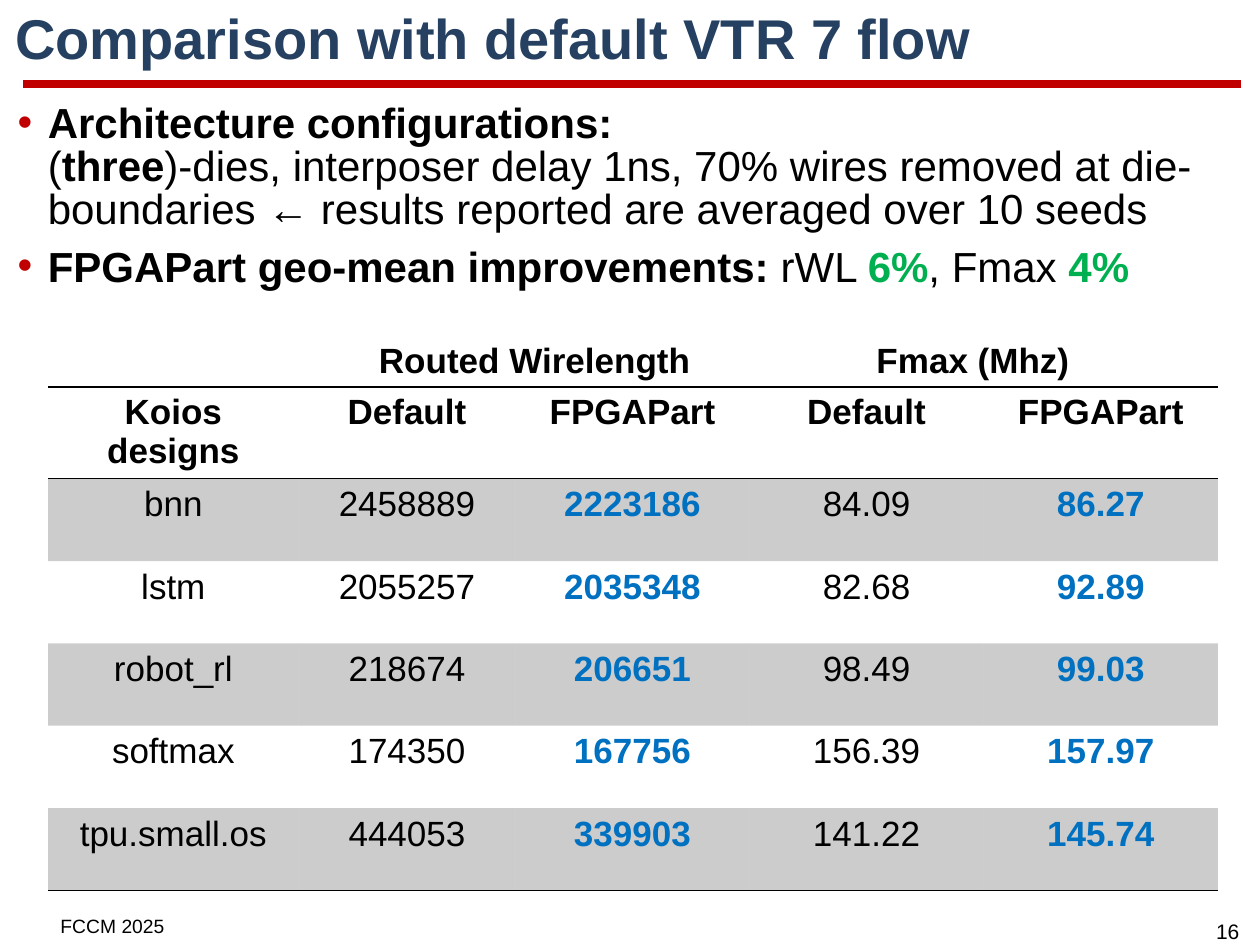
import lxml.etree
import pptx
import pptx.dml.color
import pptx.enum.shapes
import pptx.enum.text
import pptx.oxml
import pptx.oxml.ns
import pptx.util

Cm, Pt = pptx.util.Cm, pptx.util.Pt
ALIGN = pptx.enum.text.PP_ALIGN
ANCHOR = pptx.enum.text.MSO_ANCHOR
NS = pptx.oxml.ns.nsdecls("a")
HEX = {"ink": "000000", "navy": "254061", "red": "C00000",
       "green": "00B050", "blue": "0070C0"}


def write(para, text, size, tint="ink", bold=False):
    run = para.add_run()
    run.text = text
    form = {"name": "Arial", "size": Pt(size), "bold": bold}
    for key, val in form.items():
        setattr(run.font, key, val)
    run.font.color.rgb = pptx.dml.color.RGBColor.from_string(HEX[tint])


def place(shape, left, top, width, height):
    box = {"left": left, "top": top, "width": width, "height": height}
    for key, val in box.items():
        setattr(shape, key, Cm(val))


deck = pptx.Presentation()
deck.slide_width, deck.slide_height = Cm(25.4), Cm(19.05)
slide = deck.slides.add_slide(deck.slide_layouts[1])

# Rule under the title
rule = slide.shapes.add_connector(
    pptx.enum.shapes.MSO_CONNECTOR.STRAIGHT, Cm(0.46), Cm(1.7), Cm(25.02), Cm(1.7))
rule.line.width = Pt(4.5)
rule.line.color.rgb = pptx.dml.color.RGBColor.from_string(HEX["red"])
lxml.etree.SubElement(rule.element.spPr, pptx.oxml.ns.qn("a:effectLst"))

# Title and bullets
title, body = slide.placeholders
place(title, 0.05, 0.2, 25.22, 1.25)
place(body, 0.05, 1.98, 24.97, 15.8)
for shape in (title, body):
    shape.text_frame.auto_size = pptx.enum.text.MSO_AUTO_SIZE.NONE
title.text_frame.vertical_anchor = ANCHOR.MIDDLE
head = title.text_frame.paragraphs[0]
head.alignment, head.line_spacing = ALIGN.LEFT, 0.9
write(head, "Comparison with default VTR 7 flow", 32, "navy", True)

points = [
    [("Architecture configurations: ", "ink", True), None,
     ("(", "ink", False), ("three", "ink", True),
     (")-dies, interposer delay 1ns, 70% wires removed at die-boundaries "
      "← results reported are averaged over 10 seeds", "ink", False)],
    [("FPGAPart geo-mean improvements: ", "ink", True), ("rWL ", "ink", False),
     ("6%", "green", True), (", Fmax ", "ink", False), ("4%", "green", True)],
]
for num, parts in enumerate(points):
    para = body.text_frame.add_paragraph() if num else body.text_frame.paragraphs[0]
    props = para._p.get_or_add_pPr()
    props.set("marL", str(Cm(0.66)))
    props.set("indent", str(Cm(-0.61)))
    for tag in (f'<a:buClr {NS}><a:srgbClr val="{HEX["red"]}"/></a:buClr>',
                f'<a:buFont {NS} typeface="Arial"/>', f'<a:buChar {NS} char="•"/>'):
        props.append(pptx.oxml.parse_xml(tag))
    para.line_spacing, para.space_before = 0.85, Pt(8.4 if num else 0)
    for part in parts:
        if part:
            text, tint, bold = part
            write(para, text, 24, tint, bold)
        else:
            para.add_line_break()

# Results table
rows = [
    ["Koios designs", "Default", "FPGAPart", "Default", "FPGAPart"],
    ["bnn", "2458889", "2223186", "84.09", "86.27"],
    ["lstm", "2055257", "2035348", "82.68", "92.89"],
    ["robot_rl", "218674", "206651", "98.49", "99.03"],
    ["softmax", "174350", "167756", "156.39", "157.97"],
    ["tpu.small.os", "444053", "339903", "141.22", "145.74"],
]
wide = [5.05, 4.37, 4.72, 4.72, 4.72]
edges = {0: ("lnT", "lnB"), len(rows) - 1: ("lnB",)}
frame = slide.shapes.add_table(
    len(rows), len(wide), Cm(0.97), Cm(7.8), Cm(sum(wide)), Cm(10.15))
table = frame.table
table.first_row = table.horz_banding = False
style = table._tbl.tblPr.find(pptx.oxml.ns.qn("a:tableStyleId"))
style.text = "{2D5ABB26-0587-4C30-8999-92F81FD0307C}"  # no style, no grid
for col, width in zip(table.columns, wide):
    col.width = Cm(width)
for r, row in enumerate(rows):
    table.rows[r].height = Cm(1.66 if r else 1.85)
    for c, text in enumerate(row):
        cell = table.cell(r, c)
        para = cell.text_frame.paragraphs[0]
        para.alignment = ALIGN.CENTER
        ours = r > 0 and c in (2, 4)
        write(para, text, 20, "blue" if ours else "ink", ours or r == 0)
        props = cell._tc.get_or_add_tcPr()
        for edge in edges.get(r, ()):
            props.append(pptx.oxml.parse_xml(
                f'<a:{edge} {NS} w="{Pt(1)}"><a:solidFill>'
                f'<a:srgbClr val="{HEX["ink"]}"/></a:solidFill></a:{edge}>'))
        if r % 2:
            props.append(pptx.oxml.parse_xml(
                f'<a:solidFill {NS}><a:srgbClr val="{HEX["ink"]}">'
                '<a:alpha val="20000"/></a:srgbClr></a:solidFill>'))
        else:
            cell.fill.background()

# Column group heads, footer and page number
notes = [
    ("Routed Wirelength", (7.39, 6.7, 8.48, 1.12), 20, True, ALIGN.LEFT, True),
    ("Fmax (Mhz)", (17.42, 6.7, 7.9, 1.12), 20, True, ALIGN.LEFT, True),
    ("FCCM 2025", (0.97, 18.31, 4.75, 0.69), 11, False, ALIGN.LEFT, True),
    ("16", (24.13, 18.39, 1.24, 0.76), 12, False, ALIGN.CENTER, False),
]
for text, spot, size, bold, align, wrap in notes:
    box = slide.shapes.add_textbox(*map(Cm, spot))
    box.text_frame.word_wrap = wrap
    para = box.text_frame.paragraphs[0]
    para.alignment = align
    write(para, text, size, bold=bold)

deck.save("out.pptx")
